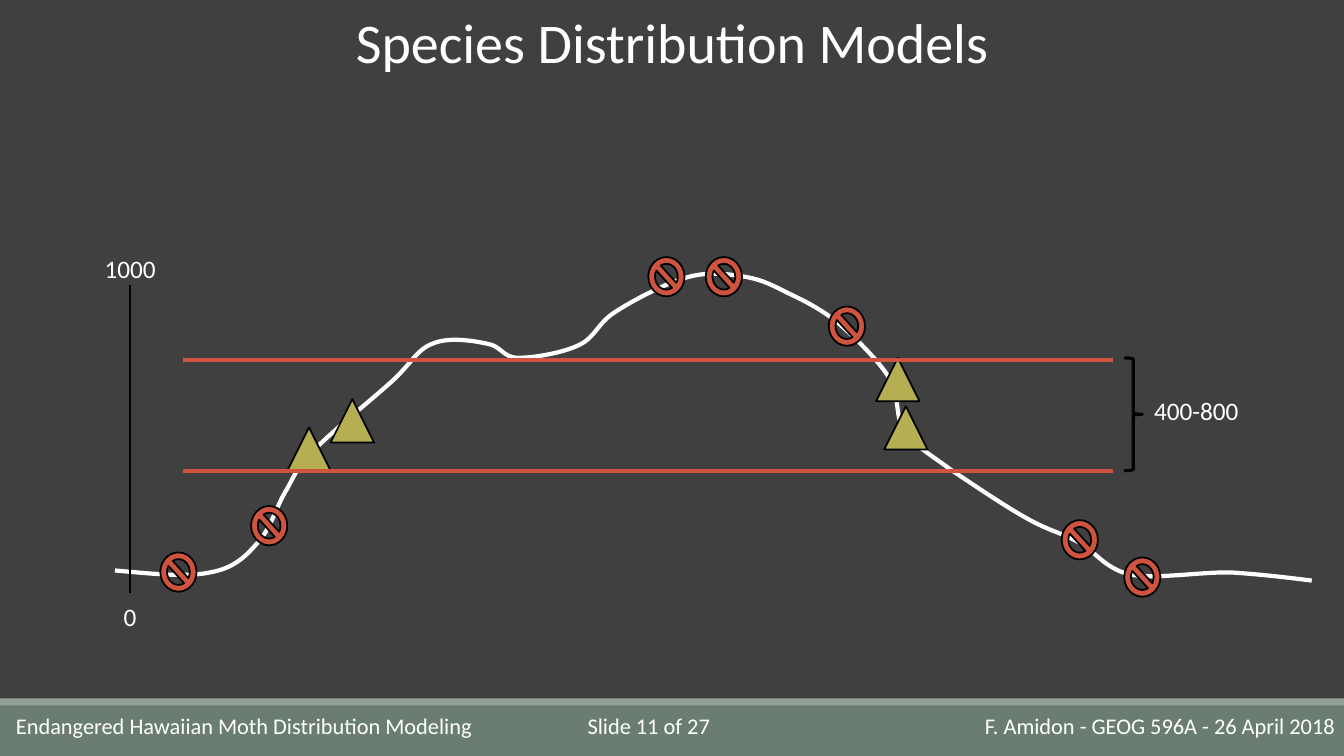
from lxml import etree
from pptx import Presentation
from pptx.dml.color import RGBColor
from pptx.enum.shapes import MSO_CONNECTOR, MSO_SHAPE
from pptx.enum.text import MSO_ANCHOR, MSO_AUTO_SIZE, PP_ALIGN
from pptx.oxml.ns import qn
from pptx.util import Inches, Pt

LEFT, CENTER, RIGHT = PP_ALIGN.LEFT, PP_ALIGN.CENTER, PP_ALIGN.RIGHT
TRIANGLE, NO_SIGN = MSO_SHAPE.ISOSCELES_TRIANGLE, MSO_SHAPE.NO_SYMBOL
RECTANGLE, BRACE = MSO_SHAPE.RECTANGLE, MSO_SHAPE.RIGHT_BRACE
STRAIGHT = MSO_CONNECTOR.STRAIGHT

BACKGROUND = RGBColor(0x40, 0x40, 0x40)
FOOTER_GREEN = RGBColor(0x6B, 0x7D, 0x72)
STRIPE_GREEN = RGBColor(0x93, 0xA2, 0x99)
OLIVE = RGBColor(0xB5, 0xAE, 0x53)
RED = RGBColor(0xCF, 0x54, 0x3F)
WHITE = RGBColor(0xFF, 0xFF, 0xFF)
BLACK = RGBColor(0, 0, 0)
FONT = "Calibri"

SLIDE_W, SLIDE_H = 13.33, 7.5
TITLE = "Species Distribution Models"

# Text, left, top, width, height, size, alignment
LABELS = [
    ("Endangered Hawaiian Moth Distribution Modeling", 0.06, 7.02, 5.58, 0.37, 16, LEFT),
    ("F. Amidon - GEOG 596A - 26 April 2018", 7.37, 7.02, 5.97, 0.37, 16, RIGHT),
    ("Slide 11 of 27", 5.57, 7.02, 1.73, 0.37, 16, CENTER),
    ("1000", 0.93, 2.46, 0.72, 0.4, 18, CENTER),
    ("0", 0.93, 5.92, 0.72, 0.4, 18, CENTER),
    ("400-800", 11.32, 3.87, 1.09, 0.4, 18, CENTER),
]

# Mountain profile: a start point, then two control points and an end per row
PROFILE_START = (1.14, 5.66)
PROFILE_CURVES = [
    ((1.49, 5.69), (1.84, 5.73), (2.08, 5.68)),
    ((2.31, 5.64), (2.43, 5.53), (2.55, 5.39)),
    ((2.68, 5.26), (2.74, 5.03), (2.83, 4.88)),
    ((2.92, 4.73), (2.92, 4.67), (3.09, 4.49)),
    ((3.27, 4.3), (3.68, 3.97), (3.88, 3.79)),
    ((4.08, 3.61), (4.13, 3.47), (4.29, 3.41)),
    ((4.45, 3.34), (4.69, 3.38), (4.83, 3.41)),
    ((4.97, 3.43), (4.99, 3.55), (5.14, 3.55)),
    ((5.3, 3.55), (5.59, 3.5), (5.75, 3.42)),
    ((5.91, 3.34), (5.93, 3.2), (6.11, 3.09)),
    ((6.28, 2.98), (6.6, 2.81), (6.82, 2.75)),
    ((7.03, 2.69), (7.24, 2.72), (7.41, 2.75)),
    ((7.57, 2.78), (7.66, 2.83), (7.82, 2.91)),
    ((7.97, 2.98), (8.15, 3.07), (8.32, 3.21)),
    ((8.48, 3.35), (8.71, 3.57), (8.82, 3.75)),
    ((8.93, 3.93), (8.87, 4.12), (8.97, 4.28)),
    ((9.08, 4.43), (9.23, 4.51), (9.43, 4.66)),
    ((9.64, 4.8), (9.98, 5.03), (10.18, 5.14)),
    ((10.39, 5.26), (10.51, 5.28), (10.68, 5.37)),
    ((10.86, 5.46), (10.95, 5.64), (11.21, 5.7)),
    ((11.47, 5.75), (11.92, 5.67), (12.22, 5.68)),
    ((12.52, 5.7), (12.77, 5.73), (13.01, 5.76)),
]

PRESENT_AT = [(2.85, 4.24), (3.28, 3.96), (8.69, 3.55), (8.77, 4.03)]
PRESENT_SIZE = (0.43, 0.43)
ABSENT_AT = [(6.43, 2.55), (7, 2.55), (1.59, 5.48), (2.49, 5.02),
             (10.53, 5.16), (11.15, 5.53), (8.22, 3.04)]
ABSENT_SIZE = (0.36, 0.39)

RANGE_LEFT, RANGE_RIGHT = 1.82, 11.04
RANGE_LEVELS = (3.57, 4.67)
AXIS_X, AXIS_TOP, AXIS_BOTTOM = 1.29, 2.83, 5.88


def style(shape, fill=None, line=None, width=1.25):
    shape.shadow.inherit = False
    if fill is None:
        shape.fill.background()
    else:
        shape.fill.solid()
        shape.fill.fore_color.rgb = fill
    if line is None:
        shape.line.fill.background()
    else:
        shape.line.color.rgb = line
        shape.line.width = Pt(width)


def add_preset(slide, preset, box, **look):
    shape = slide.shapes.add_shape(preset, *map(Inches, box))
    style(shape, **look)


def add_line(slide, start, end, color, width):
    line = slide.shapes.add_connector(STRAIGHT, *map(Inches, start + end))
    line.line.color.rgb = color
    line.line.width = Pt(width)
    etree.SubElement(line._element.spPr, qn("a:effectLst"))


def write(shape, text, size, align):
    frame = shape.text_frame
    frame.text = text
    frame.word_wrap = True
    frame.auto_size = MSO_AUTO_SIZE.NONE
    frame.vertical_anchor = MSO_ANCHOR.TOP
    paragraph = frame.paragraphs[0]
    paragraph.alignment = align
    font = paragraph.runs[0].font
    font.name, font.size, font.color.rgb = FONT, Pt(size), WHITE


def add_profile(slide):
    """Draw the mountain, turning each three straight steps into one Bezier curve."""
    points = [point for curve in PROFILE_CURVES for point in curve]
    builder = slide.shapes.build_freeform(*PROFILE_START, scale=Inches(1) / 1.0)
    builder = slide.shapes.build_freeform(*map(Inches, PROFILE_START))
    builder.add_line_segments([(Inches(x), Inches(y)) for x, y in points], close=False)
    profile = builder.convert_to_shape()
    style(profile, line=WHITE, width=3)
    steps = list(profile._element.iter(qn("a:lnTo")))
    outline = steps[0].getparent()
    for first in range(0, len(steps), 3):
        curve = etree.SubElement(outline, qn("a:cubicBezTo"))
        for step in steps[first:first + 3]:
            curve.append(step[0])
            outline.remove(step)


def main():
    deck = Presentation()
    deck.slide_width, deck.slide_height = Inches(SLIDE_W), Inches(SLIDE_H)
    slide = deck.slides.add_slide(deck.slide_layouts[5])
    slide.background.fill.solid()
    slide.background.fill.fore_color.rgb = BACKGROUND

    title = slide.shapes.title
    title.left, title.top = Inches(0), Inches(0.02)
    title.width, title.height = Inches(SLIDE_W), Inches(0.77)
    write(title, TITLE, 40, CENTER)

    add_preset(slide, RECTANGLE, (0, 7, SLIDE_W, 0.5), fill=FOOTER_GREEN)
    add_preset(slide, RECTANGLE, (0, 6.93, SLIDE_W, 0.07), fill=STRIPE_GREEN)

    add_profile(slide)
    for place in PRESENT_AT:
        add_preset(slide, TRIANGLE, place + PRESENT_SIZE, fill=OLIVE, line=BLACK)
    for place in ABSENT_AT:
        add_preset(slide, NO_SIGN, place + ABSENT_SIZE, fill=RED, line=BLACK)
    for level in RANGE_LEVELS:
        add_line(slide, (RANGE_LEFT, level), (RANGE_RIGHT, level), RED, 3)
    add_preset(slide, BRACE, (11.15, 3.55, 0.18, 1.12), line=BLACK, width=2.25)
    add_line(slide, (AXIS_X, AXIS_TOP), (AXIS_X, AXIS_BOTTOM), BLACK, 1)

    for text, left, top, width, height, size, align in LABELS:
        box = slide.shapes.add_textbox(*map(Inches, (left, top, width, height)))
        write(box, text, size, align)

    deck.save("out.pptx")


if __name__ == "__main__":
    main()
